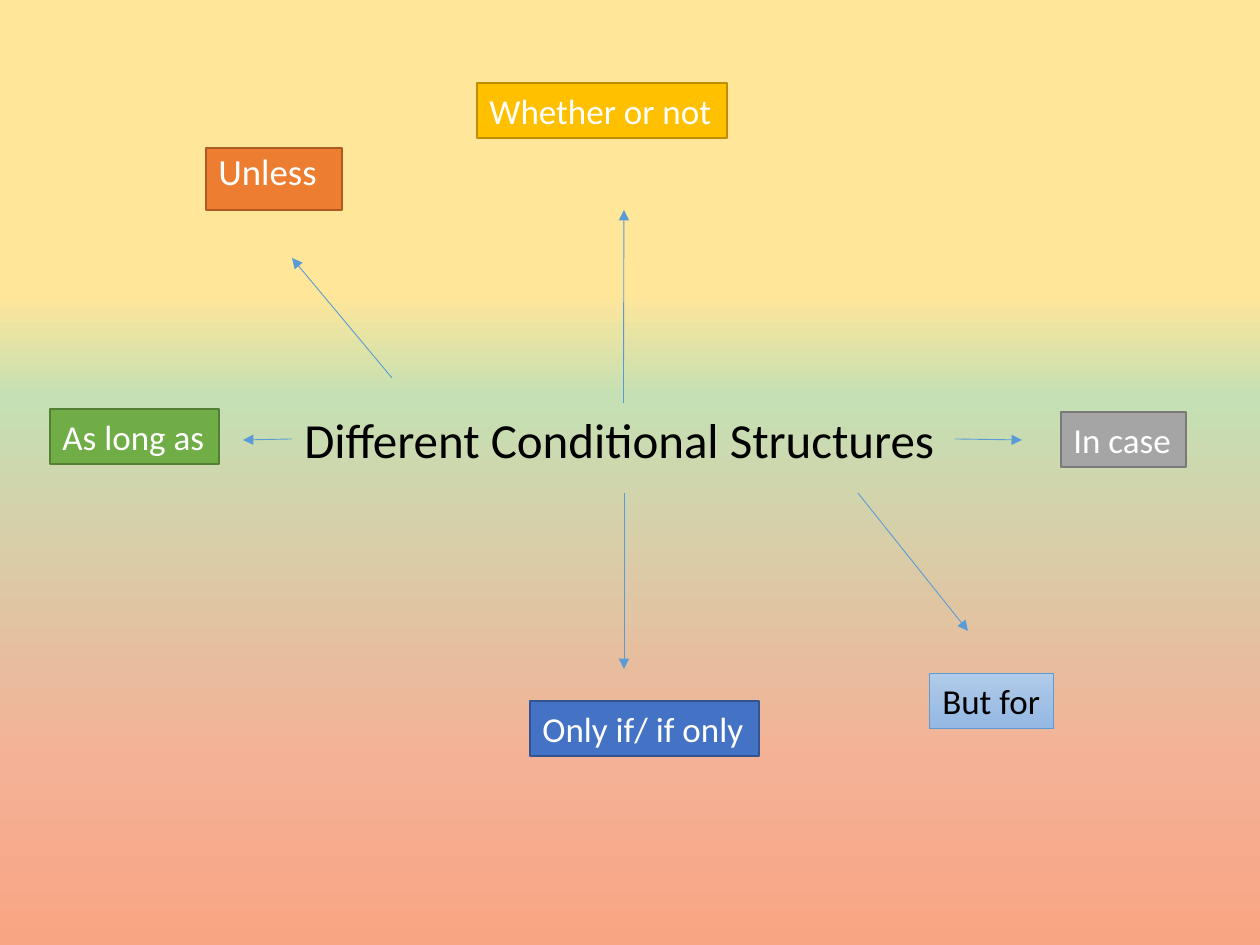
from lxml.etree import SubElement
from pptx import Presentation
from pptx.dml.color import RGBColor
from pptx.enum.shapes import MSO_CONNECTOR as Connector, MSO_SHAPE as Shape
from pptx.enum.text import MSO_ANCHOR as Anchor, MSO_AUTO_SIZE as AutoSize, PP_ALIGN as Align
from pptx.oxml.ns import qn
from pptx.util import Pt

PX = 914400 // 126
COLORS = {
    "white": "FFFFFF", "black": "000000", "arrow": "5B9BD5",
    "orange": "ED7D31", "orange_edge": "AF5C24",
    "green": "70AD47", "green_edge": "538035",
    "gray": "A5A5A5", "gray_edge": "7A7A7A",
    "blue": "4472C4", "blue_edge": "325491",
    "gold": "FFC000", "gold_edge": "BD8E00",
}
SKY = [(31, "FFE699"), (42, "C5E0B4"), (81, "F5B196"), (100, "F8A582")]
PALE_BLUE = [(0, "B1CBE9"), (50, "A3C1E5"), (100, "93B9E4")]

# text, left, top, width, height, colour
LABELS = [
    ("As long as", 50, 409, 169, 55, "green"),
    ("In case", 1061, 412, 125, 55, "gray"),
    ("Only if/ if only", 530, 701, 229, 55, "blue"),
    ("Whether or not", 477, 83, 250, 55, "gold"),
]
# start, end, side of the title where the arrow begins (None if it stands free)
ARROWS = [
    ((624, 403), (624, 210), 0),
    ((392, 378), (292, 258), None),
    ((292, 440), (243, 440), 1),
    ((955, 440), (1022, 440), 3),
    ((624, 493), (624, 669), None),
    ((858, 493), (968, 631), None),
]


def color(name):
    return RGBColor.from_string(COLORS[name])


def fill_gradient(fill, owner, stops):
    """Fill from top to bottom with any number of (percent, hex) stops."""
    fill.gradient()
    fill.gradient_angle = 270
    stop_list = next(owner.iter(qn("a:gsLst")))
    for old_stop in list(stop_list):
        stop_list.remove(old_stop)
    for percent, value in stops:
        stop = SubElement(stop_list, qn("a:gs"), pos=str(percent * 1000))
        SubElement(stop, qn("a:srgbClr"), val=value)


def write(shape, text, size, font_color):
    frame = shape.text_frame
    frame.word_wrap = False
    frame.auto_size = AutoSize.SHAPE_TO_FIT_TEXT
    frame.vertical_anchor = Anchor.TOP
    para = frame.paragraphs[0]
    para.text = text
    para.alignment = Align.LEFT
    para.font.name = "Calibri"
    para.font.size = Pt(size)
    para.font.color.rgb = color(font_color)
    return frame


def add_box(page, left, top, width, height, edge, weight=1):
    box = page.shapes.add_shape(
        Shape.RECTANGLE, left * PX, top * PX, width * PX, height * PX)
    box.shadow.inherit = False
    box.line.color.rgb = color(edge)
    box.line.width = Pt(weight)
    return box


def add_label(page, text, left, top, width, height, name, size=20):
    box = add_box(page, left, top, width, height, name + "_edge")
    box.fill.solid()
    box.fill.fore_color.rgb = color(name)
    return write(box, text, size, "white")


def add_unless(page):
    """The one label of fixed size, with tighter lines."""
    frame = add_label(page, "Unless", 206, 148, 136, 62, "orange", 21)
    frame.auto_size = AutoSize.NONE
    frame.word_wrap = True
    para = frame.paragraphs[0]
    para.line_spacing = 0.9
    para.space_before = Pt(7.5)


def add_but_for(page):
    box = add_box(page, 930, 673, 124, 55, "arrow", 0.5)
    fill_gradient(box.fill, box.element, PALE_BLUE)
    write(box, "But for", 20, "black")


def add_title(page):
    title = page.shapes.add_textbox(292 * PX, 403 * PX, 663 * PX, 72 * PX)
    write(title, "Different Conditional Structures", 28, "black")
    return title


def add_arrow(page, start, end, title, side):
    ends = [value * PX for value in start + end]
    arrow = page.shapes.add_connector(Connector.STRAIGHT, *ends)
    if side is not None:
        arrow.begin_connect(title, side)
    arrow.line.color.rgb = color("arrow")
    arrow.line.width = Pt(0.5)
    SubElement(arrow.line._get_or_add_ln(), qn("a:tailEnd"), type="triangle")
    SubElement(arrow.element.spPr, qn("a:effectLst"))


def main():
    deck = Presentation()
    deck.slide_width, deck.slide_height = 1260 * PX, 945 * PX
    page = deck.slides.add_slide(deck.slide_layouts[6])
    fill_gradient(page.background.fill, page.element, SKY)
    add_unless(page)
    add_but_for(page)
    for label in LABELS:
        add_label(page, *label)
    title = add_title(page)
    for start, end, side in ARROWS:
        add_arrow(page, start, end, title, side)
    deck.save("out.pptx")


if __name__ == "__main__":
    main()
